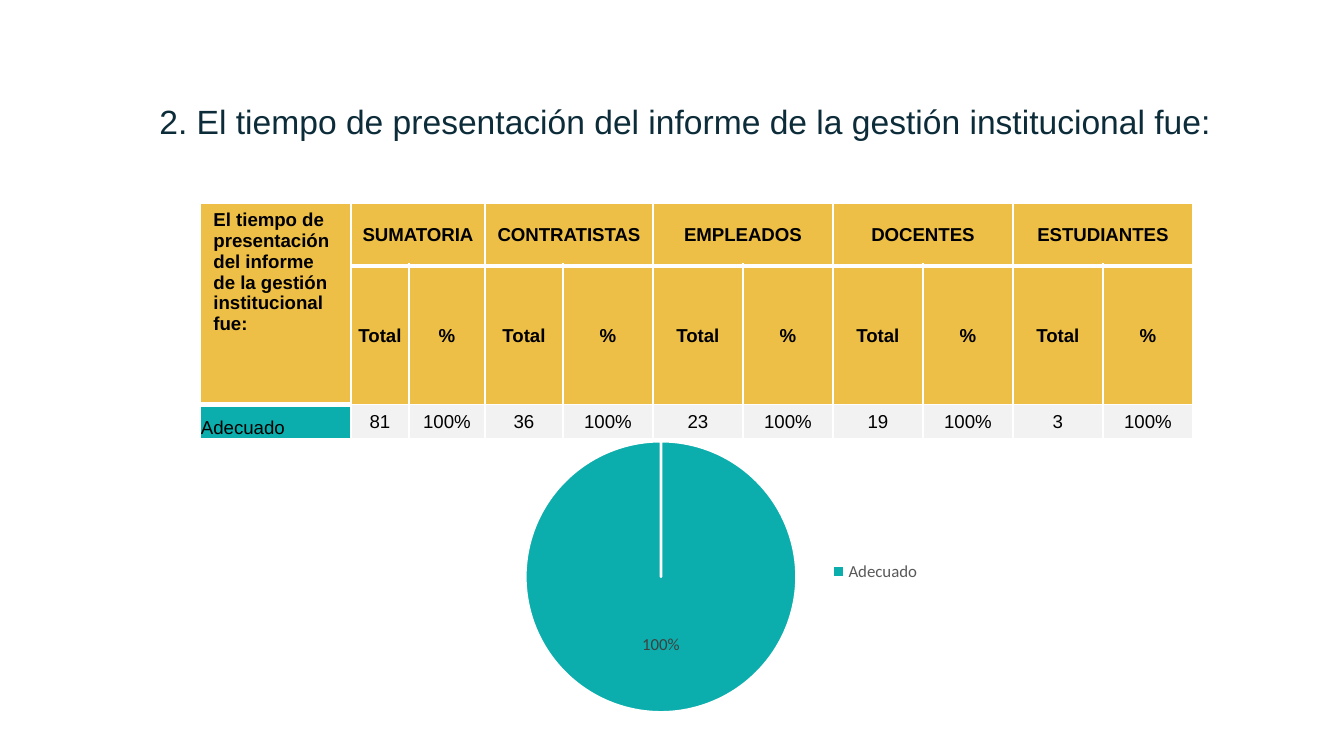
"""Build the survey slide: a title, a results table and a pie chart."""
from lxml import etree
from pptx import Presentation
from pptx.chart.data import CategoryChartData
from pptx.dml.color import RGBColor
from pptx.enum.chart import XL_CHART_TYPE, XL_LABEL_POSITION, XL_LEGEND_POSITION
from pptx.enum.text import MSO_ANCHOR, MSO_AUTO_SIZE, PP_ALIGN
from pptx.oxml import parse_xml
from pptx.oxml.ns import nsdecls, qn
from pptx.util import Pt

PX = 6804
LEFT, MID = PP_ALIGN.LEFT, PP_ALIGN.CENTER
TOP, CENTER, BASE = MSO_ANCHOR.TOP, MSO_ANCHOR.MIDDLE, MSO_ANCHOR.BOTTOM
PIE = XL_CHART_TYPE.PIE
RIGHT = XL_LEGEND_POSITION.RIGHT
INNER = XL_LABEL_POSITION.CENTER
GOLD, TEAL, GRAY, WHITE = "EDBF47", "0BAEAC", "F2F2F2", "FFFFFF"
hue = RGBColor.from_string


def write(frame, text, size=10, color="000000", bold=False, align=LEFT):
    frame.text = text
    line = frame.paragraphs[0]
    line.alignment = align
    font = line.runs[0].font
    font.name, font.size, font.bold = "Arial", Pt(size), bold
    font.color.rgb = hue(color)


def place(node, x, y, w=None, h=None, inner=False):
    old = node.find(qn("c:layout"))
    if old is not None:
        node.remove(old)
    parts = [("xMode", "edge"), ("yMode", "edge"), ("x", x), ("y", y)]
    if inner:
        parts = [("layoutTarget", "inner")] + parts + [("w", w), ("h", h)]
    layout = etree.Element(qn("c:layout"))
    manual = etree.SubElement(layout, qn("c:manualLayout"))
    for name, value in parts:
        etree.SubElement(manual, qn("c:" + name)).set("val", str(value))
    return layout


deck = Presentation()
deck.slide_width, deck.slide_height = 1344 * PX, 756 * PX
slide = deck.slides.add_slide(deck.slide_layouts[5])

title = slide.shapes.title
title.left, title.top, title.width, title.height = 146 * PX, 94 * PX, 1085 * PX, 54 * PX
frame = title.text_frame
write(frame, "2. El tiempo de presentación del informe de la gestión institucional fue:",
      size=18, color="0D2C3A")
frame.auto_size = MSO_AUTO_SIZE.NONE
frame.vertical_anchor = TOP

groups = ["SUMATORIA", "CONTRATISTAS", "EMPLEADOS", "DOCENTES", "ESTUDIANTES"]
totals = [81, 36, 23, 19, 3]
heads = ["El tiempo de presentación del informe de la gestión institucional fue:"]
units, data = [""], ["Adecuado"]
for group, total in zip(groups, totals):
    heads += [group, ""]
    units += ["Total", "%"]
    data += [str(total), "100%"]
rows = [heads, units, data]
widths = [151, 58, 76, 78] + [90] * 7
heights = [63, 138, 34]

table = slide.shapes.add_table(
    3, 11, 200 * PX, 203 * PX, sum(widths) * PX, sum(heights) * PX).table
table.first_row = table.horz_banding = False
for col, width in zip(table.columns, widths):
    col.width = width * PX
for row, height in zip(table.rows, heights):
    row.height = height * PX
table.cell(0, 0).merge(table.cell(1, 0))
for c in range(1, 11, 2):
    table.cell(0, c).merge(table.cell(0, c + 1))

for r, row in enumerate(rows):
    for c, text in enumerate(row):
        cell = table.cell(r, c)
        above = 3 if r == (1 if c else 2) else 1
        below = 3 if r == 0 or (r, c) == (1, 0) else 1
        for side, weight in zip("LRTB", [1, 1, above, below]):
            cell._tc.get_or_add_tcPr().append(parse_xml(
                f'<a:ln{side} {nsdecls("a")} w="{Pt(weight)}"><a:solidFill>'
                f'<a:srgbClr val="{WHITE}"/></a:solidFill></a:ln{side}>'))
        cell.fill.solid()
        cell.fill.fore_color.rgb = hue(GOLD if r < 2 else GRAY if c else TEAL)
        if (r < 2 and c) or (r == 2 and not c):
            cell.margin_left = cell.margin_right = cell.margin_top = PX
            cell.margin_bottom = 0
            cell.vertical_anchor = CENTER if c else BASE
        if text:
            write(cell.text_frame, text, bold=r < 2, align=MID if c else LEFT)

source = CategoryChartData()
source.categories = ["Adecuado"]
source.add_series("Series 1", [100])
chart = slide.shapes.add_chart(
    PIE, 437 * PX, 413 * PX, 521 * PX, 312 * PX, source).chart
chart.has_title = False
chart.font.name, chart.font.size = "Calibri", Pt(10)
chart.font.color.rgb = hue("000000")
chart.has_legend = True
legend = chart.legend
legend.position = RIGHT
legend.include_in_layout = False

plot = chart.plots[0]
plot.vary_by_categories = True
slice_ = plot.series[0].points[0].format
slice_.fill.solid()
slice_.fill.fore_color.rgb = hue(TEAL)
slice_.line.color.rgb = hue(WHITE)
slice_.line.width = Pt(1.5)
labels = plot.series[0].data_labels
labels.show_value = False
labels.show_percentage = True
labels.number_format, labels.number_format_is_linked = "0%", False
labels.position = INNER
for font, color in [(legend.font, "595959"), (labels.font, "404040")]:
    font.name, font.size = "Calibri", Pt(9)
    font.color.rgb = hue(color)

area = chart._chartSpace.chart.plotArea
area.insert(0, place(area, 0.16, 0.09, 0.54, 0.87, inner=True))
key = legend._element
key.find(qn("c:legendPos")).addnext(place(key, 0.75, 0.46))

deck.save("out.pptx")
